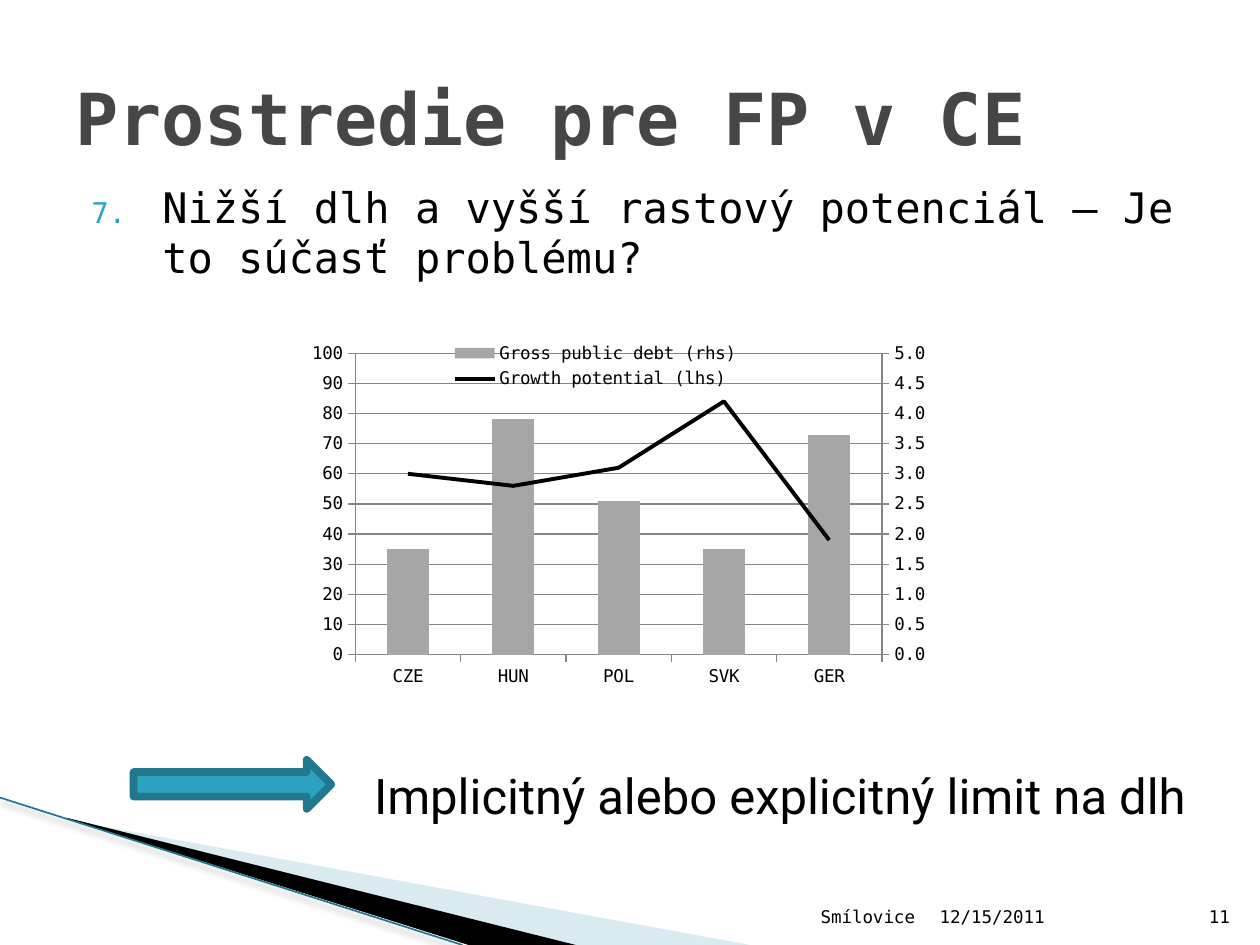
from lxml import etree
from pptx import Presentation
from pptx.chart.data import CategoryChartData
from pptx.dml.color import RGBColor
from pptx.enum import chart as ch, shapes, text
from pptx.oxml import parse_xml
from pptx.oxml.ns import nsdecls, qn
from pptx.util import Inches, Pt

MONO, SANS = "DejaVu Sans Mono", "Roboto"
BLACK, TEAL, DARK_TEAL = "000000", "2DA2BF", "21788D"
BAR_GREY, AXIS_GREY, TITLE_GREY = "A6A6A6", "868686", "464646"
LEFT, RIGHT = text.PP_ALIGN.LEFT, text.PP_ALIGN.RIGHT
TOP, MIDDLE, BOTTOM = (text.MSO_ANCHOR.TOP, text.MSO_ANCHOR.MIDDLE,
                       text.MSO_ANCHOR.BOTTOM)

# Content: words, box, font, size, colour, bold, alignment, anchor
TITLE = ("Prostredie pre FP v CE", (0.5, 0.3, 9, 1.25),
         MONO, 41, TITLE_GREY, True, LEFT, MIDDLE)
QUESTION = ("Nižší dlh a vyšší rastový potenciál – Je to súčasť problému?",
            (0.51, 1.39, 9, 1.1), MONO, 24, BLACK, False, LEFT, TOP)
CONCLUSION = ("Implicitný alebo explicitný limit na dlh",
              (2.87, 6.03, 6.69, 0.57), SANS, 28, BLACK, False, LEFT, TOP)
FOOTERS = [("Smílovice", 4.79, 2.57, RIGHT),
           ("12/15/2011", 7.36, 2.1, LEFT),
           ("11", 9.46, 0.4, RIGHT)]

COUNTRIES = ["CZE", "HUN", "POL", "SVK", "GER"]
DEBT = ("Gross public debt (rhs)", [35, 78, 51, 35, 73])
GROWTH = ("Growth potential (lhs)", [3, 2.8, 3.1, 4.2, 1.9])
PLOT_LAYOUT = (0.084, 0.051, 0.836, 0.798)
LEGEND_LAYOUT = (0.23, 0.01, 0.47, 0.15)

# Corner wedges: points, colour, opacity in percent
WEDGES = [
    ([(0.55, 6.5), (0.55, 6.51), (5.95, 7.5), (4.56, 7.5)], "A0CBDC", 40),
    ([(0.53, 6.49), (4.57, 7.5), (3.72, 7.5), (0.54, 6.5)], BLACK, 100),
]


def rgb(value):
    return RGBColor.from_string(value)


def box_lengths(box):
    return [Inches(v) for v in box]


def add_text(slide, words, box, face, size, color, bold, align, anchor):
    frame = slide.shapes.add_textbox(*box_lengths(box)).text_frame
    frame.word_wrap = True
    frame.vertical_anchor = anchor
    paragraph = frame.paragraphs[0]
    paragraph.alignment = align
    run = paragraph.add_run()
    run.text = words
    run.font.name, run.font.size, run.font.bold = face, Pt(size), bold
    run.font.color.rgb = rgb(color)
    return paragraph


def number_paragraph(paragraph, start):
    props = paragraph._p.get_or_add_pPr()
    props.set("marL", str(Inches(0.68)))
    props.set("indent", str(Inches(-0.56)))
    color = etree.SubElement(props, qn("a:buClr"))
    etree.SubElement(color, qn("a:srgbClr"), val=TEAL)
    etree.SubElement(props, qn("a:buSzPct"), val="68000")
    etree.SubElement(props, qn("a:buAutoNum"), type="arabicPeriod",
                     startAt=str(start))


def add_wedge(slide, points, color, opacity):
    corners = [(Inches(x), Inches(y)) for x, y in points]
    builder = slide.shapes.build_freeform(*corners[0])
    builder.add_line_segments(corners[1:], close=True)
    wedge = builder.convert_to_shape()
    wedge.shadow.inherit = False
    wedge.fill.solid()
    wedge.fill.fore_color.rgb = rgb(color)
    wedge.line.fill.background()
    if opacity < 100:
        fill_color = wedge._element.spPr.find(".//" + qn("a:srgbClr"))
        etree.SubElement(fill_color, qn("a:alpha"), val=str(opacity * 1000))


def add_edge(slide):
    edge = slide.shapes.add_connector(
        shapes.MSO_CONNECTOR.STRAIGHT,
        *box_lengths((0, 6.33, 3.67, 7.5)))
    edge.line.color.rgb = rgb(DARK_TEAL)
    edge.line.width = Pt(0.95)
    edge._element.spPr.append(parse_xml(
        f'<a:effectLst {nsdecls("a")}><a:outerShdw blurRad="{Pt(4)}" '
        f'dist="{Pt(3)}" dir="5400000" algn="t" rotWithShape="0">'
        '<a:srgbClr val="000000"><a:alpha val="35000"/></a:srgbClr>'
        '</a:outerShdw></a:effectLst>'))


def layout_xml(place, inner=False):
    target = '<c:layoutTarget val="inner"/>' if inner else ""
    modes = "".join(f'<c:{k}Mode val="edge"/>' for k in "xy")
    sizes = "".join(f'<c:{k} val="{v}"/>' for k, v in zip("xywh", place))
    return parse_xml(f'<c:layout {nsdecls("c")}><c:manualLayout>{target}'
                     f'{modes}{sizes}</c:manualLayout></c:layout>')


def move_growth_to_right_axis(chart):
    plot_area = chart._chartSpace.chart.plotArea
    bars = plot_area.find(qn("c:barChart"))
    growth = bars.findall(qn("c:ser"))[1]
    for tag in ("c:invertIfNegative", "c:spPr"):
        for old in growth.findall(qn(tag)):
            growth.remove(old)
    lines = parse_xml(
        f'<c:lineChart {nsdecls("c")}><c:grouping val="standard"/>'
        '<c:varyColors val="0"/><c:marker val="1"/>'
        '<c:axId val="5001"/><c:axId val="5002"/></c:lineChart>')
    lines.insert(2, growth)
    bars.addnext(lines)
    outline = (f'<c:spPr><a:ln w="9525"><a:solidFill><a:srgbClr '
               f'val="{AXIS_GREY}"/></a:solidFill></a:ln></c:spPr>')
    hidden_axis = (
        f'<c:catAx {nsdecls("c")}><c:axId val="5001"/><c:scaling>'
        '<c:orientation val="minMax"/></c:scaling><c:delete val="1"/>'
        '<c:axPos val="b"/><c:crossAx val="5002"/></c:catAx>')
    right_axis = (
        f'<c:valAx {nsdecls("c", "a")}><c:axId val="5002"/><c:scaling>'
        '<c:orientation val="minMax"/><c:max val="5"/><c:min val="0"/>'
        '</c:scaling><c:delete val="0"/><c:axPos val="r"/>'
        '<c:numFmt formatCode="#,##0.0" sourceLinked="0"/>'
        '<c:majorTickMark val="out"/><c:minorTickMark val="none"/>'
        f'<c:tickLblPos val="nextTo"/>{outline}<c:crossAx val="5001"/>'
        '<c:crosses val="max"/><c:majorUnit val="0.5"/></c:valAx>')
    last_axis = plot_area.findall(qn("c:valAx"))[-1]
    for axis in (right_axis, hidden_axis):
        last_axis.addnext(parse_xml(axis))


def add_debt_chart(slide):
    data = CategoryChartData()
    data.categories = COUNTRIES
    for name, values in (DEBT, GROWTH):
        data.add_series(name, values)
    chart = slide.shapes.add_chart(
        ch.XL_CHART_TYPE.COLUMN_CLUSTERED,
        *box_lengths((2.4, 2.65, 5, 3)), data).chart
    chart.has_title = False
    chart.font.name, chart.font.size = MONO, Pt(10)
    chart.font.color.rgb = rgb(BLACK)

    # Left and bottom axes
    debt_axis = chart.value_axis
    debt_axis.minimum_scale, debt_axis.maximum_scale = 0, 100
    debt_axis.major_unit = 10
    debt_axis.tick_labels.number_format = "0"
    debt_axis.tick_labels.number_format_is_linked = False
    debt_axis.has_major_gridlines = True
    debt_axis.major_gridlines.format.line.color.rgb = rgb(AXIS_GREY)
    for axis in (debt_axis, chart.category_axis):
        axis.major_tick_mark = ch.XL_TICK_MARK.OUTSIDE
        axis.format.line.color.rgb = rgb(AXIS_GREY)

    # Columns on the left axis, line on the right one
    columns = chart.plots[0]
    columns.gap_width, columns.vary_by_categories = 150, False
    move_growth_to_right_axis(chart)
    debt = chart.plots[0].series[0]
    debt.format.fill.solid()
    debt.format.fill.fore_color.rgb = rgb(BAR_GREY)
    growth = chart.plots[1].series[0]
    growth.smooth = False
    growth.marker.style = ch.XL_MARKER_STYLE.NONE
    growth.format.line.color.rgb = rgb(BLACK)
    growth.format.line.width = Pt(2.25)

    # Plot and legend places
    plot_area = chart._chartSpace.chart.plotArea
    for old in plot_area.findall(qn("c:layout")):
        plot_area.remove(old)
    plot_area.insert(0, layout_xml(PLOT_LAYOUT, inner=True))
    chart.has_legend = True
    chart.legend.position = ch.XL_LEGEND_POSITION.RIGHT
    chart.legend.include_in_layout = False
    legend = chart.legend._element
    for old in legend.findall(qn("c:layout")):
        legend.remove(old)
    legend.find(qn("c:legendPos")).addnext(layout_xml(LEGEND_LAYOUT))


def add_arrow(slide):
    arrow = slide.shapes.add_shape(shapes.MSO_SHAPE.RIGHT_ARROW,
                                   *box_lengths((1.06, 6.03, 1.57, 0.39)))
    arrow.shadow.inherit = False
    arrow.fill.solid()
    arrow.fill.fore_color.rgb = rgb(TEAL)
    arrow.line.color.rgb = rgb(DARK_TEAL)
    arrow.line.width = Pt(4.33)


def main():
    deck = Presentation()
    deck.slide_width, deck.slide_height = Inches(10), Inches(7.5)
    slide = deck.slides.add_slide(deck.slide_layouts[6])
    for wedge in WEDGES:
        add_wedge(slide, *wedge)
    add_edge(slide)
    number_paragraph(add_text(slide, *QUESTION), 7)
    for words, left, width, align in FOOTERS:
        add_text(slide, words, (left, 7.01, width, 0.4),
                 MONO, 10, BLACK, False, align, BOTTOM)
    add_text(slide, *TITLE)
    add_arrow(slide)
    add_text(slide, *CONCLUSION)
    add_debt_chart(slide)
    deck.save("out.pptx")


if __name__ == "__main__":
    main()
